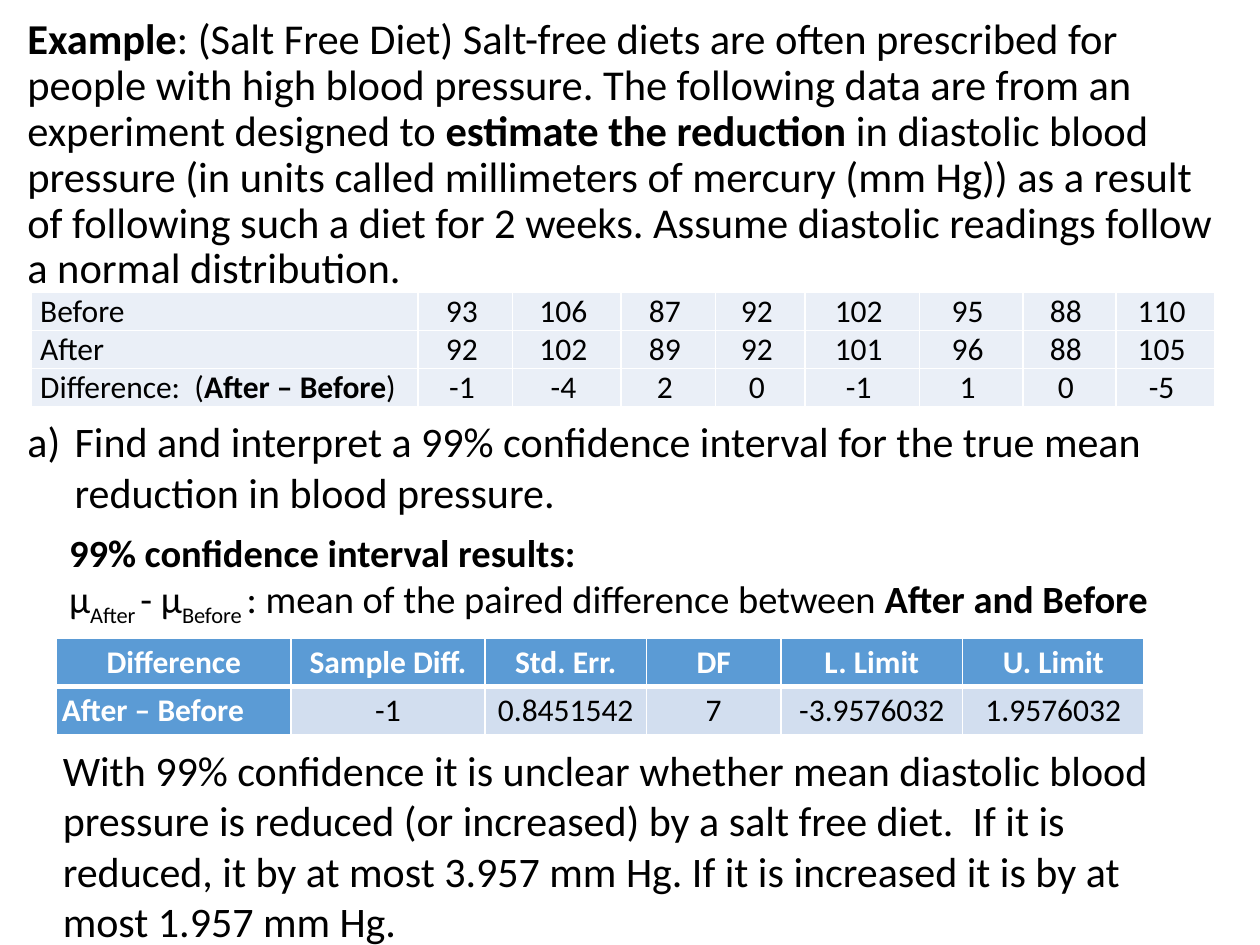
from lxml import etree
from pptx import Presentation
from pptx.dml.color import RGBColor
from pptx.enum.text import MSO_ANCHOR, PP_ALIGN
from pptx.oxml.ns import qn
from pptx.util import Pt

BLACK = RGBColor(0x00, 0x00, 0x00)
WHITE = RGBColor(0xFF, 0xFF, 0xFF)
PALE = RGBColor(0xEA, 0xEF, 0xF7)
LIGHT = RGBColor(0xD2, 0xDE, 0xEF)
BLUE = RGBColor(0x5B, 0x9B, 0xD5)
LEFT, CENTER = PP_ALIGN.LEFT, PP_ALIGN.CENTER
TOP, MIDDLE = MSO_ANCHOR.TOP, MSO_ANCHOR.MIDDLE
FONT = "Calibri"


def add_runs(p, parts, size, color=BLACK):
    """Add (text, bold, baseline) parts; a "\\n" text is a line break."""
    for text, bold, baseline in parts:
        if text == "\n":
            p.add_line_break()
            continue
        r = p.add_run()
        r.text = text
        r.font.name, r.font.size, r.font.bold = FONT, Pt(size), bold
        r.font.color.rgb = color
        if baseline:
            r.font._element.set("baseline", str(baseline * 1000))


def format_cell(cell, fill, margins, anchor, bottom=1, top=1):
    """Set margins (side, end), white borders (widths in points) and fill."""
    side, end = margins
    cell.margin_left = cell.margin_right = Pt(side)
    cell.margin_top = cell.margin_bottom = Pt(end)
    cell.vertical_anchor = anchor
    tc_pr = cell._tc.get_or_add_tcPr()
    for edge, width in (("L", 1), ("R", 1), ("T", top), ("B", bottom)):
        ln = etree.SubElement(tc_pr, qn("a:ln" + edge), w=str(Pt(width)))
        solid = etree.SubElement(ln, qn("a:solidFill"))
        etree.SubElement(solid, qn("a:srgbClr"), val=str(WHITE))
    cell.fill.solid()
    cell.fill.fore_color.rgb = fill


prs = Presentation()
prs.slide_width, prs.slide_height = Pt(720), Pt(540)
s = prs.slides.add_slide(prs.slide_layouts[6])

# Text blocks: left, top, width, height, size, anchor, parts
intro = [
    ("Example", True, 0),
    (": (Salt Free Diet) Salt-free diets are often prescribed for people with "
     "high blood pressure. The following data are from an experiment designed to ", False, 0),
    ("estimate the reduction", True, 0),
    (" in diastolic blood pressure (in units called millimeters of mercury "
     "(mm Hg)) as a result of following such a diet for 2 weeks. Assume "
     "diastolic readings follow a normal distribution.", False, 0),
]
question = [("Find and interpret a 99% confidence interval for the true mean "
             "reduction in blood pressure.", False, 0)]
result_heading = [
    ("99% confidence interval results: ", True, 0),
    ("\n", False, 0),
    ("μ", False, 0),
    ("After ", False, -25),
    ("- μ", False, 0),
    ("Before ", False, -25),
    (": mean of the paired difference between ", False, 0),
    ("After and Before", True, 0),
]
conclusion = [("With 99% confidence it is unclear whether mean diastolic blood "
               "pressure is reduced (or increased) by a salt free diet.  If it is "
               "reduced, it by at most 3.957 mm Hg. If it is increased it is by at "
               "most 1.957 mm Hg.", False, 0)]
blocks = [
    (8.6, 10.8, 700.6, 156.2, 24.3, MIDDLE, intro),
    (8.6, 234, 684, 65.5, 24, TOP, question),
    (32.4, 298.8, 649.4, 60.5, 22, TOP, result_heading),
    (28.8, 421.9, 662.4, 123.8, 24, TOP, conclusion),
]
for left, top, width, height, size, anchor, parts in blocks:
    tf = s.shapes.add_textbox(Pt(left), Pt(top), Pt(width), Pt(height)).text_frame
    tf.word_wrap = True
    tf.vertical_anchor = anchor
    p = tf.paragraphs[0]
    add_runs(p, parts, size)
    if parts is intro:
        p.line_spacing = 0.9
    elif parts is question:
        p_pr = p._p.get_or_add_pPr()
        p_pr.set("marL", str(Pt(27)))
        p_pr.set("indent", str(Pt(-27)))
        etree.SubElement(p_pr, qn("a:buFont"), typeface=FONT)
        etree.SubElement(p_pr, qn("a:buAutoNum"), type="alphaLcParenR")

# Readings before and after the diet
before = [93, 106, 87, 92, 102, 95, 88, 110]
after = [92, 102, 89, 92, 101, 96, 88, 105]
difference = [a - b for a, b in zip(after, before)]
readings = [
    ([("Before", False, 0)], before),
    ([("After", False, 0)], after),
    ([("Difference:  (", False, 0), ("After – Before", True, 0), (")", False, 0)],
     difference),
]
widths = [221, 54, 62, 54, 51, 65.5, 59, 53.3, 56.2]
table = s.shapes.add_table(3, len(widths), Pt(18), Pt(167), Pt(sum(widths)), Pt(65.4)).table
for column, width in zip(table.columns, widths):
    column.width = Pt(width)
for i, (label, values) in enumerate(readings):
    row = [label] + [[(f"{value} ", False, 0)] for value in values]
    for j, parts in enumerate(row):
        cell = table.cell(i, j)
        format_cell(cell, PALE, (5, 0), TOP)
        p = cell.text_frame.paragraphs[0]
        p.alignment = CENTER if j else LEFT
        add_runs(p, parts, 18)

# Confidence interval output
interval = [
    ["Difference", "Sample Diff.", "Std. Err.", "DF", "L. Limit", "U. Limit"],
    ["After – Before", "-1", "0.8451542", "7", "-3.9576032", "1.9576032"],
]
widths = [133.9, 110.9, 92.2, 77, 103.7, 103.7]
table = s.shapes.add_table(2, len(widths), Pt(32.4), Pt(364.6), Pt(sum(widths)), Pt(55.4)).table
for column, width in zip(table.columns, widths):
    column.width = Pt(width)
for i, row in enumerate(interval):
    for j, text in enumerate(row):
        header = i == 0 or j == 0
        cell = table.cell(i, j)
        format_cell(cell, BLUE if header else LIGHT, (3, 3), MIDDLE,
                    bottom=1 if i else 3, top=3 if i else 1)
        p = cell.text_frame.paragraphs[0]
        p.alignment = LEFT if i and not j else CENTER
        add_runs(p, [(text, header, 0)], 18, WHITE if header else BLACK)

prs.save("out.pptx")
